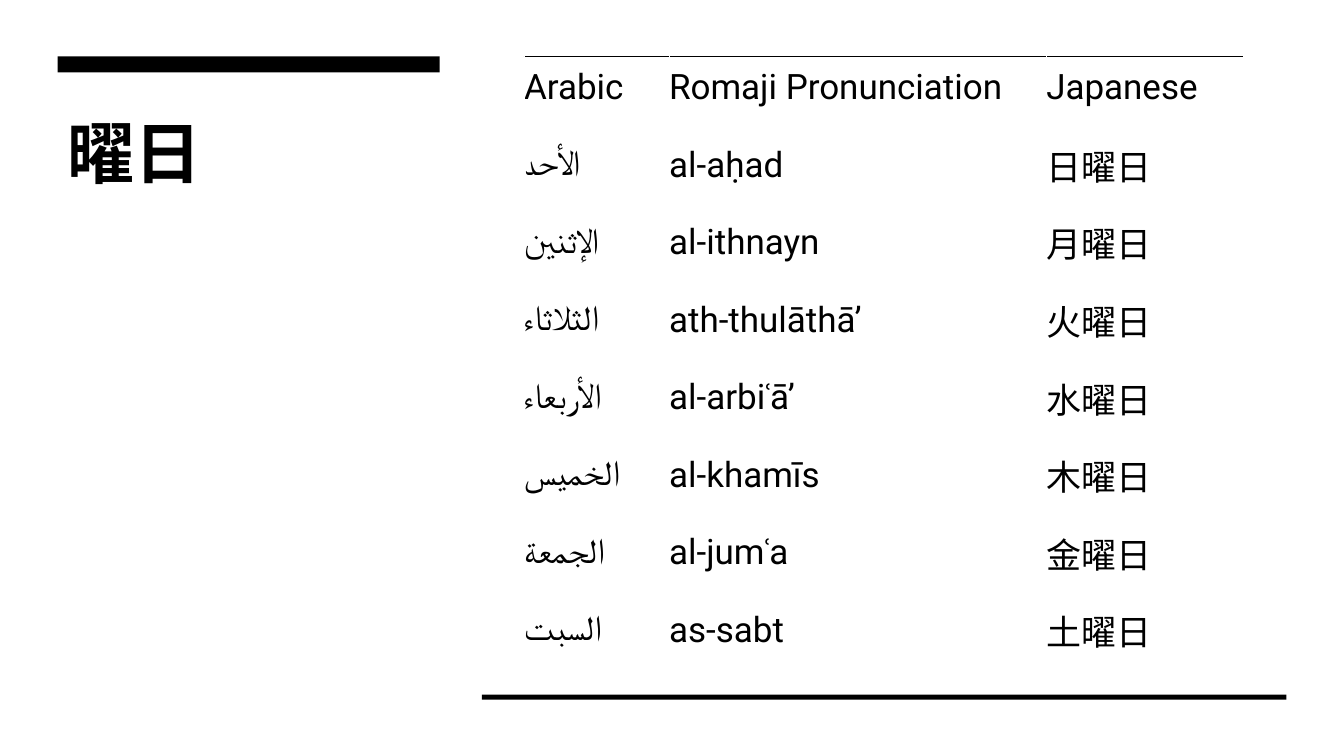
from dataclasses import dataclass
from lxml import etree
from pptx import Presentation
from pptx.dml.color import RGBColor as RGB
from pptx.enum.shapes import MSO_SHAPE as Shape
from pptx.enum.text import MSO_ANCHOR as Anchor, PP_ALIGN as Align
from pptx.oxml.ns import qn
from pptx.util import Pt

TITLE = "曜日"
DAYS = [
    ("Arabic", "Romaji Pronunciation", "Japanese"),
    ("الأحد", "al-aḥad", "日曜日"),
    ("الإثنين", "al-ithnayn", "月曜日"),
    ("الثلاثاء", "ath-thulāthāʼ", "火曜日"),
    ("الأربعاء", "al-arbiʿāʼ", "水曜日"),
    ("الخميس", "al-khamīs", "木曜日"),
    ("الجمعة", "al-jumʿa", "金曜日"),
    ("السبت", "as-sabt", "土曜日"),
]


@dataclass(frozen=True)
class Theme:
    ink: str = "000000"
    paper: str = "FFFFFF"
    font: str = "Roboto"
    title: int = 48
    body: int = 25
    rule: float = 0.75


T = Theme()
SLIDE_W, SLIDE_H = 960, 540
LEFT, TOP = 41.1, 40.3
SIDE_W = 272.9
TABLE_LEFT = 374.4
COL_WIDTHS = (103.6, 269.4, 140.7)
ROW_H = 55.4
CELL_INSETS = (0, 4.3, 15.1, 15.1)

BARS = [
    (0, 0, SLIDE_W, SLIDE_H, T.paper),
    (LEFT, TOP, SIDE_W, 11.5, T.ink),
    (344.2, 496.1, 574.6, 3.6, T.ink),
]


def put_text(tf, text, size=T.body, bold=False, color=T.ink):
    tf.word_wrap = True
    p = tf.paragraphs[0]
    p.alignment = Align.LEFT
    r = p.add_run()
    r.text = text
    r.font.name = T.font
    r.font.size = Pt(size)
    r.font.bold = bold
    r.font.color.rgb = RGB.from_string(color)


def add_bar(s, x, y, w, h, color):
    sp = s.shapes.add_shape(Shape.RECTANGLE, Pt(x), Pt(y), Pt(w), Pt(h))
    sp.shadow.inherit = False
    sp.fill.solid()
    sp.fill.fore_color.rgb = RGB.from_string(color)
    sp.line.fill.background()


def add_top_border(cell):
    ln = etree.Element(qn("a:lnT"), w=str(Pt(T.rule)))
    fill = etree.SubElement(ln, qn("a:solidFill"))
    etree.SubElement(fill, qn("a:srgbClr"), val=T.ink)
    cell._tc.get_or_add_tcPr().insert(0, ln)


def add_days(s):
    frame = s.shapes.add_table(
        len(DAYS), len(COL_WIDTHS), Pt(TABLE_LEFT), Pt(TOP),
        Pt(sum(COL_WIDTHS)), Pt(ROW_H * len(DAYS)))
    table = frame.table
    table.first_row = table.horz_banding = False
    for column, width in zip(table.columns, COL_WIDTHS):
        column.width = Pt(width)
    for i, day in enumerate(DAYS):
        table.rows[i].height = Pt(ROW_H)
        for j, text in enumerate(day):
            cell = table.cell(i, j)
            cell.fill.background()
            cell.vertical_anchor = Anchor.MIDDLE
            (cell.margin_left, cell.margin_top,
             cell.margin_right, cell.margin_bottom) = map(Pt, CELL_INSETS)
            put_text(cell.text_frame, text)
            if i == 0:
                add_top_border(cell)


def main():
    prs = Presentation()
    prs.slide_width, prs.slide_height = Pt(SLIDE_W), Pt(SLIDE_H)
    s = prs.slides.add_slide(prs.slide_layouts[6])
    for bar in BARS:
        add_bar(s, *bar)
    title = s.shapes.add_textbox(Pt(LEFT), Pt(76.3), Pt(SIDE_W), Pt(231.8))
    put_text(title.text_frame, TITLE, size=T.title, bold=True)
    add_days(s)
    prs.save("out.pptx")


if __name__ == "__main__":
    main()
